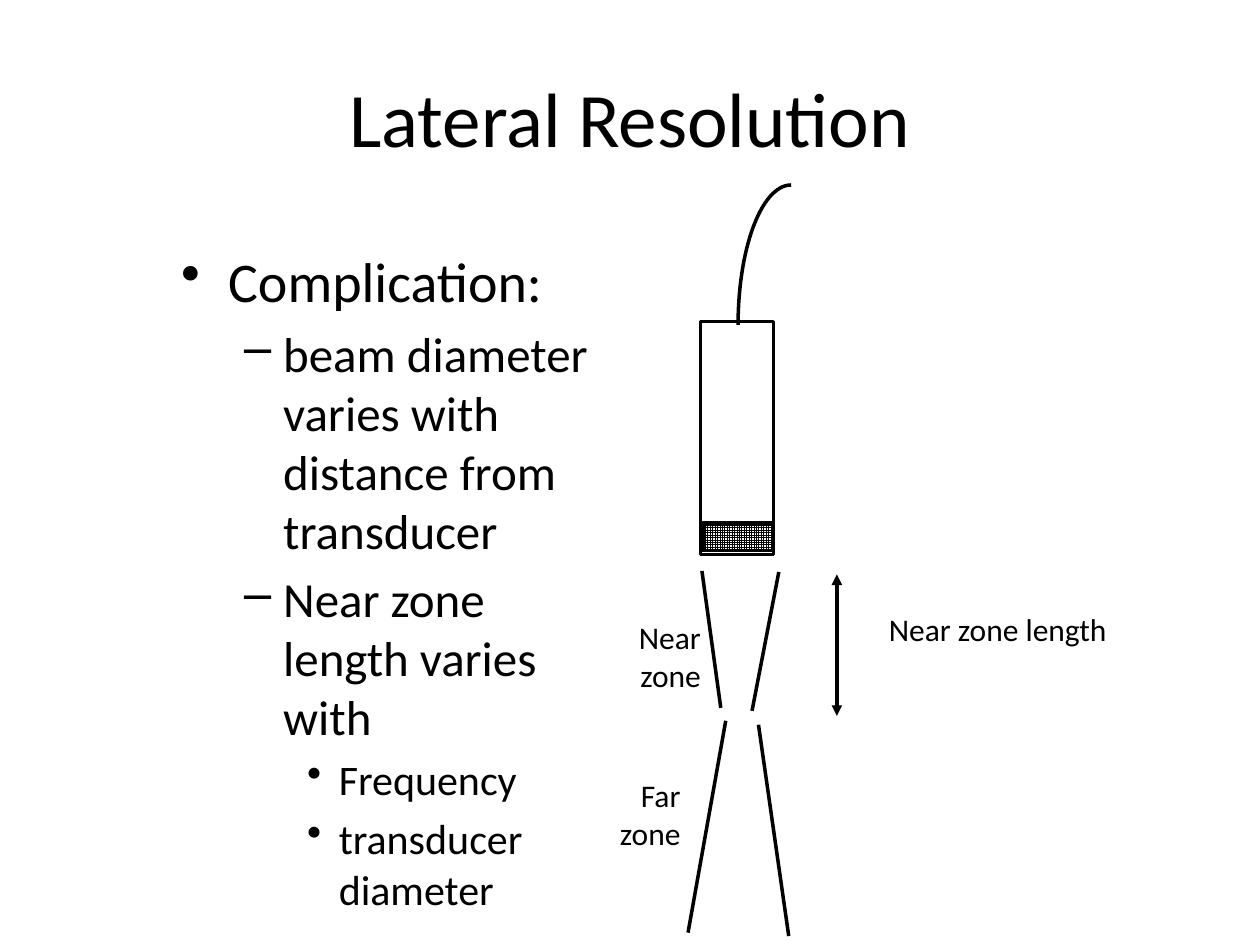
import math
from typing import NamedTuple

import lxml.etree
import pptx
import pptx.dml.color
import pptx.enum.dml
import pptx.enum.shapes
import pptx.enum.text
import pptx.oxml.ns
import pptx.util

Cm = pptx.util.Cm
Pt = pptx.util.Pt
ALIGN = pptx.enum.text.PP_ALIGN
COLORS = {"ink": "000000", "paper": "FFFFFF"}
FONT = "Calibri"
STROKE = 2


class Box(NamedTuple):
    left: float
    top: float
    width: float
    height: float


class Level(NamedTuple):
    mark: str
    size: int
    margin: float
    hang: float


class Item(NamedTuple):
    text: str
    level: int


class Label(NamedTuple):
    lines: list[str]
    box: Box


class Ray(NamedTuple):
    x1: float
    y1: float
    x2: float
    y2: float
    arrow: bool = False


LEVELS = [
    Level("•", 32, 0.95, 0.95),
    Level("–", 28, 2.06, 0.79),
    Level("•", 24, 3.18, 0.64),
]
ITEMS = [
    Item("Complication:", 0),
    Item("beam diameter varies with distance from transducer", 1),
    Item("Near zone length varies with", 1),
    Item("Frequency", 2),
    Item("transducer diameter", 2),
]
LABELS = [
    Label(["Near zone length"], Box(17.15, 12.17, 5.41, 1.02)),
    Label(["Near", "zone"], Box(12.42, 12.34, 1.96, 1.7)),
    Label(["Far", "zone"], Box(12.01, 15.52, 1.96, 1.7)),
]
RAYS = [
    Ray(14.15, 11.51, 14.53, 14.27),
    Ray(15.7, 11.53, 15.16, 14.33),
    Ray(14.63, 14.53, 13.87, 18.8),
    Ray(15.29, 14.61, 15.9, 18.87),
    Ray(16.87, 11.58, 16.87, 14.43, arrow=True),
]


def color(name: str):
    return pptx.dml.color.RGBColor.from_string(COLORS[name])


def place(box: Box) -> list:
    return [Cm(value) for value in box]


def child(parent, tag: str, **attrs: str):
    return lxml.etree.SubElement(parent, pptx.oxml.ns.qn(tag), **attrs)


def write(para, text: str, *, size: int, align=None, level: Level | None = None,
          rtl: bool = False) -> None:
    run = para.add_run()
    run.text = text
    run.font.name = FONT
    run.font.size = Pt(size)
    run.font.color.rgb = color("ink")
    para.alignment = align
    props = para._p.get_or_add_pPr()
    if rtl:
        props.set("rtl", "1")
    if level:
        para.space_before = Pt(size * 0.2)
        props.set("marL", str(Cm(level.margin)))
        props.set("indent", str(-Cm(level.hang)))
        child(props, "a:buChar", char=level.mark)


def lines(frame, count: int) -> list:
    return [frame.paragraphs[0]] + [frame.add_paragraph() for _ in range(count - 1)]


def outline(shape) -> None:
    shape.line.color.rgb = color("ink")
    shape.line.width = Pt(STROKE)


def draw_title(slide, text: str, box: Box) -> None:
    title = slide.shapes.title
    title.left, title.top, title.width, title.height = place(box)
    title.text_frame.vertical_anchor = pptx.enum.text.MSO_ANCHOR.MIDDLE
    write(title.text_frame.paragraphs[0], text, size=44, align=ALIGN.CENTER)


def draw_list(slide, box: Box) -> None:
    frame = slide.shapes.add_textbox(*place(box)).text_frame
    frame.word_wrap = True
    for para, item in zip(lines(frame, len(ITEMS)), ITEMS):
        level = LEVELS[item.level]
        para.level = item.level
        write(para, item.text, size=level.size, align=ALIGN.LEFT, level=level)


def draw_label(slide, label: Label) -> None:
    frame = slide.shapes.add_textbox(*place(label.box)).text_frame
    frame.word_wrap = False
    frame.auto_size = pptx.enum.text.MSO_AUTO_SIZE.SHAPE_TO_FIT_TEXT
    for para, text in zip(lines(frame, len(label.lines)), label.lines):
        write(para, text, size=18, align=ALIGN.RIGHT, rtl=True)


def draw_block(group, box: Box, grid: bool = False) -> None:
    block = group.shapes.add_shape(pptx.enum.shapes.MSO_SHAPE.RECTANGLE, *place(box))
    block.shadow.inherit = False
    if grid:
        block.fill.patterned()
        block.fill.pattern = pptx.enum.dml.MSO_PATTERN.SMALL_GRID
        block.fill.fore_color.rgb = color("ink")
        block.fill.back_color.rgb = color("paper")
    else:
        block.fill.solid()
        block.fill.fore_color.rgb = color("paper")
    outline(block)


def draw_cable(group, box: Box, steps: int = 30) -> None:
    turns = [math.pi / 2 * step / steps for step in range(steps + 1)]
    points = [
        (Cm(box.left + box.width * (1 - math.cos(turn))),
         Cm(box.top + box.height * (1 - math.sin(turn))))
        for turn in turns
    ]
    pen = group.shapes.build_freeform(*points[0])
    pen.add_line_segments(points[1:], close=False)
    cable = pen.convert_to_shape()
    cable.shadow.inherit = False
    cable.fill.background()
    outline(cable)


def draw_ray(slide, ray: Ray) -> None:
    link = slide.shapes.add_connector(
        pptx.enum.shapes.MSO_CONNECTOR.STRAIGHT, *[Cm(value) for value in ray[:4]])
    outline(link)
    if ray.arrow:
        for tag in ("a:headEnd", "a:tailEnd"):
            child(link.line._get_or_add_ln(), tag, type="triangle")
    child(link._element.spPr, "a:effectLst")


def main() -> None:
    deck = pptx.Presentation()
    deck.slide_width, deck.slide_height = Cm(25.4), Cm(19.05)
    slide = deck.slides.add_slide(deck.slide_layouts[5])
    draw_title(slide, "Lateral Resolution", Box(1.27, 0.76, 22.86, 3.18))
    draw_list(slide, Box(3.4, 4.85, 9.27, 13.49))
    probe = slide.shapes.add_group_shape()
    draw_block(probe, Box(14.12, 6.48, 1.47, 4.7))
    draw_block(probe, Box(14.17, 10.54, 1.42, 0.56), grid=True)
    draw_cable(probe, Box(14.88, 3.73, 1.07, 2.82))
    for ray in RAYS:
        draw_ray(slide, ray)
    for label in LABELS:
        draw_label(slide, label)
    deck.save("out.pptx")


if __name__ == "__main__":
    main()
